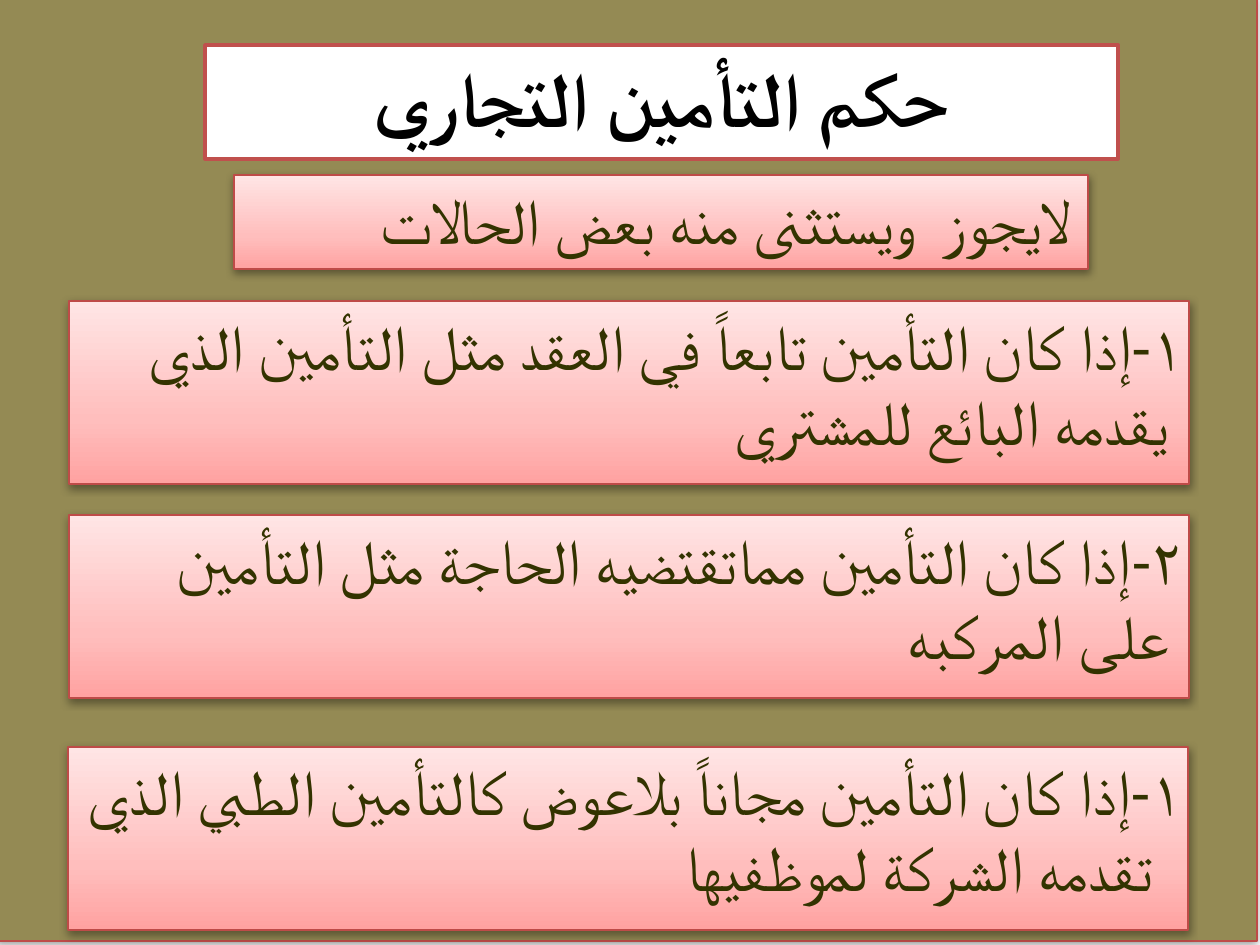
from lxml import etree
from copy import deepcopy
from pptx import Presentation
from pptx.dml.color import RGBColor
from pptx.enum.shapes import MSO_SHAPE
from pptx.enum.text import MSO_ANCHOR, MSO_AUTO_SIZE, PP_ALIGN
from pptx.oxml.ns import qn
from pptx.util import Emu, Pt

RECTANGLE = MSO_SHAPE.RECTANGLE
TOP = MSO_ANCHOR.TOP
GROW = MSO_AUTO_SIZE.SHAPE_TO_FIT_TEXT
CENTER, RIGHT = PP_ALIGN.CENTER, PP_ALIGN.RIGHT

PX = 914400 // 126
OLIVE = RGBColor(0x94, 0x8A, 0x54)
WHITE = RGBColor(0xFF, 0xFF, 0xFF)
BLACK = RGBColor(0, 0, 0)
INK = RGBColor(0x33, 0x33, 0x00)
RED = RGBColor(0xC0, 0x50, 0x4D)
DARK_RED = RGBColor(0xBE, 0x4B, 0x48)
PINKS = [
    (0, RGBColor(0xFF, 0xA2, 0xA1)),
    (0.35, RGBColor(0xFF, 0xBE, 0xBD)),
    (1, RGBColor(0xFF, 0xE5, 0xE5)),
]
FONT = "Calibri"

TITLE = "حكم التأمين التجاري"
STATEMENTS = [
    ((234, 175, 854, 94), "لايجوز  ويستثنى منه بعض الحالات "),
    ((69, 301, 1120, 183),
     "١-إذا كان التأمين تابعاً في العقد مثل التأمين الذي يقدمه البائع للمشتري "),
    ((69, 515, 1120, 183),
     "٢-إذا كان التأمين مماتقتضيه الحاجة مثل التأمين على المركبه "),
    ((68, 747, 1120, 183),
     "١-إذا كان التأمين مجاناً بلاعوض كالتأمين الطبي الذي تقدمه الشركة لموظفيها  "),
]


def add_box(slide, bounds, line_color, line_width):
    """Add an outlined rectangle without a shadow."""
    box = slide.shapes.add_shape(RECTANGLE, *(Emu(n * PX) for n in bounds))
    box.shadow.inherit = False
    box.line.color.rgb = line_color
    box.line.width = Pt(line_width)
    return box


def fill_solid(box, color):
    """Fill a box with one colour."""
    box.fill.solid()
    box.fill.fore_color.rgb = color


def fill_pink(box):
    """Fill a box with the pink gradient, darkest at the bottom."""
    box.fill.gradient()
    box.fill.gradient_angle = 90
    stop_list = next(box.element.spPr.iter(qn("a:gsLst")))
    stop_list.append(deepcopy(stop_list[-1]))
    for stop, (position, color) in zip(box.fill.gradient_stops, PINKS):
        stop.position = position
        stop.color.rgb = color


def cast_shadow(box):
    """Give a box a soft shadow that falls downwards."""
    effects = box.element.spPr.find(qn("a:effectLst"))
    shadow = etree.SubElement(
        effects, qn("a:outerShdw"), blurRad=str(Pt(5)), dist=str(Pt(1.6)),
        dir="5400000", rotWithShape="0")
    color = etree.SubElement(shadow, qn("a:srgbClr"), val="000000")
    etree.SubElement(color, qn("a:alpha"), val="38000")


def write(box, text, size, color, alignment, bold=False):
    """Write one Arabic paragraph into a box."""
    frame = box.text_frame
    frame.text = text
    frame.word_wrap = True
    frame.auto_size = GROW
    frame.vertical_anchor = TOP
    frame.margin_left = frame.margin_right = Emu(6 * PX)
    frame.margin_top = frame.margin_bottom = Emu(6 * PX)
    paragraph = frame.paragraphs[0]
    paragraph.alignment = alignment
    font = paragraph.runs[0].font
    font.name = FONT
    font.size = Pt(size)
    font.bold = bold
    font.color.rgb = color
    properties = paragraph.runs[0]._r.get_or_add_rPr()
    etree.SubElement(properties, qn("a:cs"), typeface=FONT)


def add_backdrop(slide):
    """Cover the slide with the olive panel."""
    backdrop = add_box(slide, (-3, -4, 1260, 945), DARK_RED, 0.75)
    fill_solid(backdrop, OLIVE)
    cast_shadow(backdrop)


def add_title(slide):
    """Add the white title box."""
    title = add_box(slide, (205, 45, 913, 114), RED, 2)
    fill_solid(title, WHITE)
    write(title, TITLE, 44, BLACK, CENTER, bold=True)


def add_statement(slide, bounds, text):
    """Add a pink box with one statement of the ruling."""
    statement = add_box(slide, bounds, DARK_RED, 0.75)
    fill_pink(statement)
    cast_shadow(statement)
    write(statement, text, 36, INK, RIGHT)


def main():
    """Build the slide and save it."""
    deck = Presentation()
    deck.slide_width = Emu(1260 * PX)
    deck.slide_height = Emu(945 * PX)
    slide = deck.slides.add_slide(deck.slide_layouts[6])
    add_backdrop(slide)
    add_title(slide)
    for bounds, text in STATEMENTS:
        add_statement(slide, bounds, text)
    deck.save("out.pptx")


if __name__ == "__main__":
    main()
